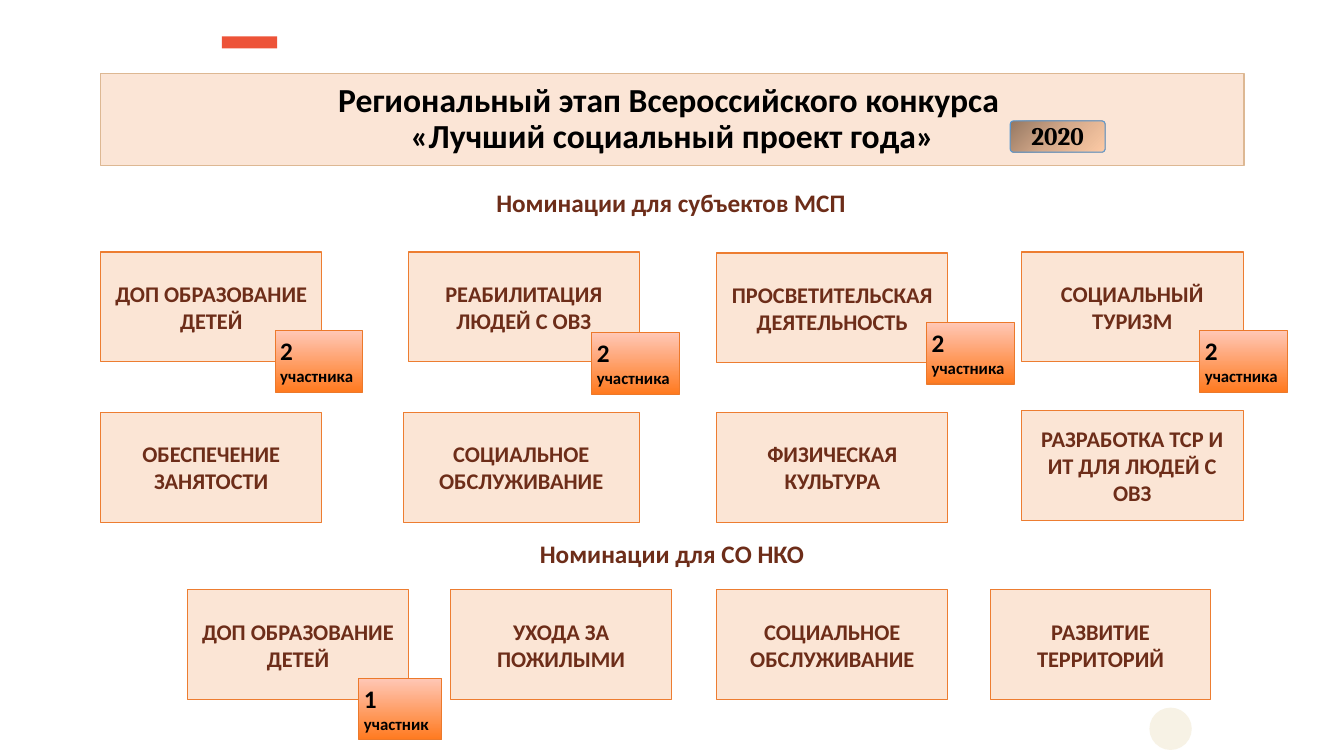
from lxml import etree
from pptx import Presentation
from pptx.dml.color import RGBColor
from pptx.enum.shapes import MSO_SHAPE
from pptx.enum.text import MSO_ANCHOR, PP_ALIGN
from pptx.oxml.ns import qn
from pptx.util import Inches, Pt

RECTANGLE, ROUNDED, OVAL = MSO_SHAPE.RECTANGLE, MSO_SHAPE.ROUNDED_RECTANGLE, MSO_SHAPE.OVAL
TOP, MIDDLE = MSO_ANCHOR.TOP, MSO_ANCHOR.MIDDLE
LEFT, CENTER = PP_ALIGN.LEFT, PP_ALIGN.CENTER

COLORS = {
    "cream": "F7F2E5", "red": "ED5338",
    "title_fill": "FBE5D6", "title_line": "DDB893",
    "card_fill": "FBE5D5", "card_line": "ED7D31",
    "brown": "6D2D19", "black": "000000",
    "badge_line": "EC792B", "year_line": "5698D3",
}
BADGE_STOPS = [(0, "FF7A1F"), (100, "FFC7B6")]
YEAR_STOPS = [(0, "967862"), (50, "D5AA8B"), (100, "FDCAA5")]

presentation = Presentation()
presentation.slide_width, presentation.slide_height = Inches(13.33), Inches(7.5)
slide = presentation.slides.add_slide(presentation.slide_layouts[6])


def add_box(kind, box, fill, line=None, line_width=0.75, angle=0):
    """Add a shape; fill is a colour name or a list of gradient stops."""
    shape = slide.shapes.add_shape(kind, *map(Inches, box))
    shape.shadow.inherit = False
    if isinstance(fill, str):
        shape.fill.solid()
        shape.fill.fore_color.rgb = RGBColor.from_string(COLORS[fill])
    else:
        shape.fill.gradient()
        shape.fill.gradient_angle = 360 - angle  # counter-clockwise
        stop_list = shape._element.spPr.find(qn("a:gradFill")).find(qn("a:gsLst"))
        for stop in list(stop_list):
            stop_list.remove(stop)
        for position, color in fill:
            stop = etree.SubElement(stop_list, qn("a:gs"), pos=str(position * 1000))
            etree.SubElement(stop, qn("a:srgbClr"), val=color)
    if line:
        shape.line.color.rgb = RGBColor.from_string(COLORS[line])
        shape.line.width = Pt(line_width)
    else:
        shape.line.fill.background()
    return shape


def write(shape, parts, color, anchor=MIDDLE, align=CENTER, side=0.05, font="Calibri"):
    """Fill the first paragraph with (text, size) parts in bold."""
    frame = shape.text_frame
    frame.word_wrap = True
    frame.vertical_anchor = anchor
    frame.margin_left = frame.margin_right = Inches(side)
    paragraph = frame.paragraphs[0]
    paragraph.alignment = align
    for index, (text, size) in enumerate(parts):
        if text == "\v":
            paragraph.add_line_break()
            continue
        run = paragraph.add_run()
        run.text = text
        run.font.name, run.font.size, run.font.bold = font, Pt(size), True
        run.font.color.rgb = RGBColor.from_string(COLORS[color])
    return paragraph


# Decoration
add_box(OVAL, (11.4, 7.02, 0.42, 0.42), "cream")
add_box(RECTANGLE, (2.2, 0.36, 0.55, 0.12), "red")

# Title
title = add_box(RECTANGLE, (1, 0.73, 11.34, 0.91), "title_fill", "title_line", 1)
title_lines = [("Региональный этап Всероссийского конкурса ", 24), ("\v", 24),
               ("«Лучший социальный проект года»", 24)]
write(title, title_lines, "black").line_spacing = 0.9

# Nomination cards: left, top, width, text
CARD_HEIGHT = 1.09
cards = [
    (1, 2.5, 2.19, "ДОП ОБРАЗОВАНИЕ ДЕТЕЙ"),
    (4.05, 2.5, 2.29, "РЕАБИЛИТАЦИЯ ЛЮДЕЙ С ОВЗ"),
    (7.11, 2.51, 2.29, "ПРОСВЕТИТЕЛЬСКАЯ ДЕЯТЕЛЬНОСТЬ"),
    (10.13, 2.5, 2.2, "СОЦИАЛЬНЫЙ ТУРИЗМ"),
    (1, 4.09, 2.19, "ОБЕСПЕЧЕНИЕ ЗАНЯТОСТИ"),
    (4, 4.09, 2.34, "СОЦИАЛЬНОЕ ОБСЛУЖИВАНИЕ"),
    (7.11, 4.09, 2.29, "ФИЗИЧЕСКАЯ КУЛЬТУРА"),
    (10.13, 4.07, 2.2, "РАЗРАБОТКА ТСР И ИТ ДЛЯ ЛЮДЕЙ С ОВЗ"),
    (1.86, 5.85, 2.19, "ДОП ОБРАЗОВАНИЕ ДЕТЕЙ"),
    (4.47, 5.85, 2.19, "УХОДА ЗА ПОЖИЛЫМИ"),
    (7.11, 5.85, 2.29, "СОЦИАЛЬНОЕ ОБСЛУЖИВАНИЕ"),
    (9.82, 5.85, 2.19, "РАЗВИТИЕ ТЕРРИТОРИЙ"),
]
for left, top, width, text in cards:
    card = add_box(RECTANGLE, (left, top, width, CARD_HEIGHT), "card_fill", "card_line")
    write(card, [(text, 16)], "brown", side=0.1)

# Group headings
for left, top, text in [(2.83, 1.81, "Номинации для субъектов МСП"),
                        (2.84, 5.29, "Номинации для СО НКО")]:
    heading = slide.shapes.add_textbox(*map(Inches, (left, top, 7.65, 0.4)))
    write(heading, [(text, 18)], "brown", anchor=TOP)

# Participant badges
badges = [
    (2.73, 3.28, 0.87, "2 ", "участника"),
    (5.87, 3.3, 0.87, "2 ", "участника"),
    (9.19, 3.2, 0.87, "2 ", "участника"),
    (11.9, 3.28, 0.87, "2 ", "участника"),
    (3.56, 6.73, 0.82, "1 ", "участник"),
]
for left, top, width, count, label in badges:
    badge = add_box(RECTANGLE, (left, top, width, 0.61), BADGE_STOPS, "badge_line", angle=270)
    write(badge, [(count, 18), (label, 12)], "black", anchor=TOP, align=LEFT)

# Year
year = add_box(ROUNDED, (10.02, 1.2, 0.94, 0.31), YEAR_STOPS, "year_line", angle=45)
year.adjustments[0] = 0.1
write(year, [("2020", 18)], "black", anchor=TOP, side=0.1, font="Cambria").line_spacing = Pt(17)

presentation.save("out.pptx")
